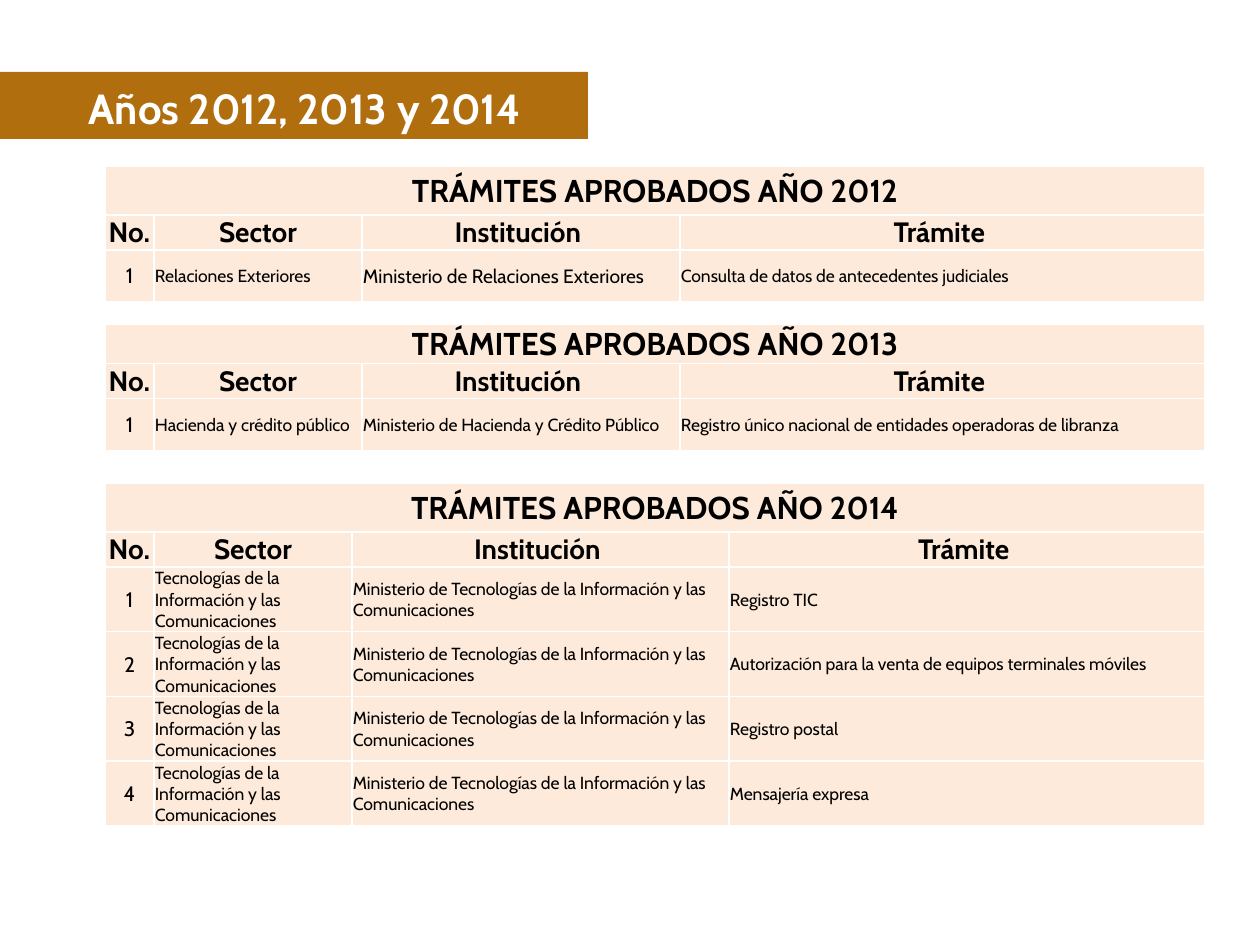
from lxml import etree
from pptx import Presentation
from pptx.dml.color import RGBColor
from pptx.enum.shapes import MSO_SHAPE
from pptx.enum.text import MSO_ANCHOR, PP_ALIGN
from pptx.oxml.ns import qn
from pptx.util import Pt

RECTANGLE = MSO_SHAPE.RECTANGLE
TOP, MIDDLE = MSO_ANCHOR.TOP, MSO_ANCHOR.MIDDLE
LEFT, CENTER = PP_ALIGN.LEFT, PP_ALIGN.CENTER
FONT = "Cabin"
COLORS = {"banner": "B06E0E", "cell": "FDEADA", "text": "000000", "white": "FFFFFF"}
HEADINGS = ("No. ", "Sector", "Institución ", "Trámite ")


def px(length):
    return round(length * 914400 / 126)


def style(paragraph, size, bold, color, align):
    paragraph.alignment = align
    paragraph.font.name = FONT
    paragraph.font.size = Pt(size)
    paragraph.font.bold = bold
    paragraph.font.color.rgb = RGBColor.from_string(COLORS[color])


prs = Presentation()
prs.slide_width, prs.slide_height = px(1260), px(945)
slide = prs.slides.add_slide(prs.slide_layouts[5])

banner = slide.shapes.add_shape(RECTANGLE, px(-14), px(72), px(602), px(67))
banner.shadow.inherit = False
banner.fill.solid()
banner.fill.fore_color.rgb = RGBColor.from_string(COLORS["banner"])
banner.line.fill.background()
slide.shapes._spTree.insert(2, banner._element)

title = slide.shapes.title
title.left, title.top, title.width, title.height = px(76), px(76), px(573), px(115)
title.text_frame.text = "Años 2012, 2013 y 2014"
title.text_frame.vertical_anchor = TOP
style(title.text_frame.paragraphs[0], 24, True, "white", LEFT)

tic_sector = "Tecnologías de la Información y las Comunicaciones"
tic_ministry = "Ministerio de Tecnologías de la Información y las Comunicaciones"
tic_procedures = (
    "Registro TIC",
    "Autorización para la venta de equipos terminales móviles",
    "Registro postal",
    "Mensajería expresa",
)
wide_columns = (49, 208, 318, 525)
years = [
    (2012, 166, wide_columns, (49, 35, 52), (12, 10, 11, 10), [
        ("Relaciones Exteriores", "Ministerio de Relaciones Exteriores",
         "Consulta de datos de antecedentes judiciales")]),
    (2013, 324, wide_columns, (39, 35, 52), (12, 10, 10, 10), [
        ("Hacienda y crédito público", "Ministerio de Hacienda y Crédito Público",
         "Registro único nacional de entidades operadoras de libranza")]),
    (2014, 483, (49, 198, 377, 476), (49, 35, 64), (12, 10, 10, 10), [
        (tic_sector, tic_ministry, procedure) for procedure in tic_procedures]),
]

for year, top, columns, (title_height, heading_height, body_height), sizes, records in years:
    heights = [title_height, heading_height] + [body_height] * len(records)
    table = slide.shapes.add_table(
        len(heights), len(columns), px(105), px(top), px(sum(columns)), px(sum(heights))
    ).table
    for column, width in zip(table.columns, columns):
        column.width = px(width)
    for row, height in zip(table.rows, heights):
        row.height = px(height)

    rows = [(f"TRÁMITES APROBADOS AÑO {year}", "", "", ""), HEADINGS]
    rows += [(str(number), *record) for number, record in enumerate(records, 1)]
    for r, texts in enumerate(rows):
        for c, text in enumerate(texts):
            cell = table.cell(r, c)
            cell.vertical_anchor = MIDDLE
            cell.margin_left = cell.margin_top = cell.margin_right = px(1)
            cell.margin_bottom = 0
            for side in ("a:lnL", "a:lnR", "a:lnT", "a:lnB"):
                border = etree.SubElement(cell._tc.get_or_add_tcPr(), qn(side), w=str(Pt(1)))
                border_fill = etree.SubElement(border, qn("a:solidFill"))
                etree.SubElement(border_fill, qn("a:srgbClr"), val=COLORS["white"])
            cell.fill.solid()
            cell.fill.fore_color.rgb = RGBColor.from_string(COLORS["cell"])
            cell.text = text
            size = (18, 16)[r] if r < 2 else sizes[c]
            align = CENTER if r < 2 or c == 0 else LEFT
            style(cell.text_frame.paragraphs[0], size, r < 2, "text", align)
    table.cell(0, 0).merge(table.cell(0, len(columns) - 1))

prs.save("out.pptx")
